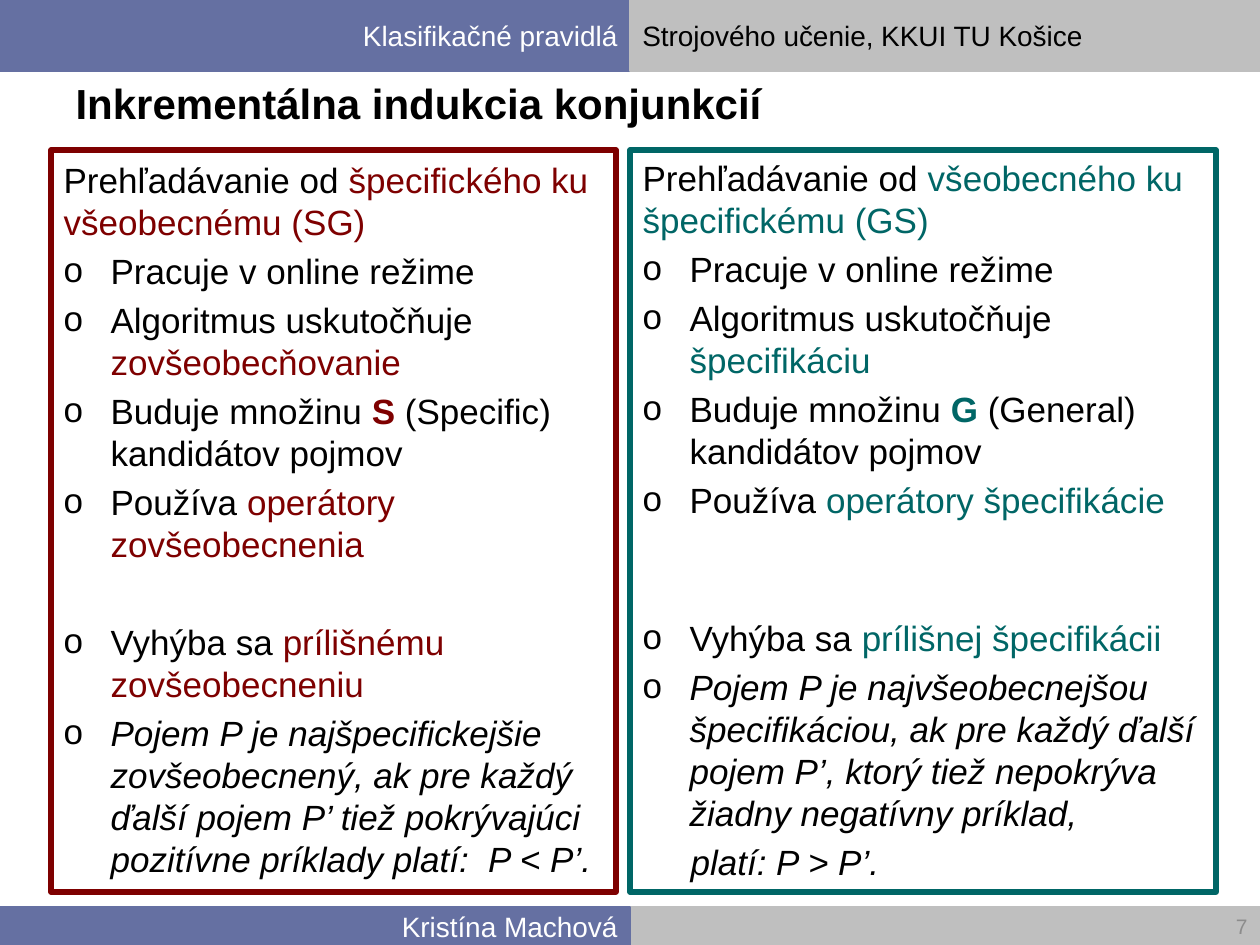
from lxml.etree import SubElement
from pptx import Presentation
from pptx.dml.color import RGBColor
from pptx.enum.shapes import MSO_SHAPE
from pptx.enum.text import MSO_ANCHOR, MSO_AUTO_SIZE, PP_ALIGN
from pptx.oxml.ns import qn
from pptx.util import Emu, Pt

PX_PER_INCH = 126
FONT = "Arial"
BLACK = RGBColor(0x00, 0x00, 0x00)
WHITE = RGBColor(0xFF, 0xFF, 0xFF)
BLUE = RGBColor(0x65, 0x70, 0xA2)
GREY = RGBColor(0xBF, 0xBF, 0xBF)
NUMBER_GREY = RGBColor(0x8C, 0x8C, 0x8C)
DARK_RED = RGBColor(0x7E, 0x00, 0x00)
TEAL = RGBColor(0x00, 0x66, 0x66)

WIDTH, HEIGHT, HALF = 1260, 945, 630
HEADER_HEIGHT = 71
FOOTER_TOP, FOOTER_HEIGHT = 907, 38
INDENT = 47
PLAIN, ACCENT, STRONG, ITALIC = "plain", "accent", "strong", "italic"

SPECIFIC_TO_GENERAL = [
    dict(parts=[("Prehľadávanie od ", PLAIN),
                ("špecifického ku všeobecnému (SG)", ACCENT)], bullet=None),
    dict(parts=[("Pracuje v online režime", PLAIN)]),
    dict(parts=[("Algoritmus uskutočňuje ", PLAIN), ("zovšeobecňovanie", ACCENT)]),
    dict(parts=[("Buduje množinu ", PLAIN), ("S", STRONG),
                (" (Specific) kandidátov pojmov", PLAIN)]),
    dict(parts=[("Používa ", PLAIN), ("operátory zovšeobecnenia", ACCENT)]),
    dict(parts=[("Vyhýba sa ", PLAIN), ("prílišnému zovšeobecneniu", ACCENT)],
         before=32),
    dict(parts=[("Pojem P je najšpecifickejšie zovšeobecnený, ak pre každý ďalší "
                 "pojem P’ tiež pokrývajúci pozitívne príklady platí:  P < P’.", ITALIC)]),
]
GENERAL_TO_SPECIFIC = [
    dict(parts=[("Prehľadávanie od ", PLAIN),
                ("všeobecného ku špecifickému (GS)", ACCENT)], bullet=None),
    dict(parts=[("Pracuje v online režime", PLAIN)]),
    dict(parts=[("Algoritmus uskutočňuje ", PLAIN), ("špecifikáciu", ACCENT)]),
    dict(parts=[("Buduje množinu ", PLAIN), ("G", STRONG),
                (" (General) kandidátov pojmov", PLAIN)]),
    dict(parts=[("Používa ", PLAIN), ("operátory špecifikácie", ACCENT)]),
    dict(parts=[("Vyhýba sa ", PLAIN), ("prílišnej špecifikácii", ACCENT)],
         before=55),
    dict(parts=[("Pojem P je najvšeobecnejšou špecifikáciou, ak pre každý ďalší "
                 "pojem P’, ktorý tiež nepokrýva žiadny negatívny príklad,", ITALIC)]),
    dict(parts=[("platí: P > P’.", ITALIC)], bullet=None, margin=INDENT + 1),
]


def px(length):
    return Emu(round(length * 914400 / PX_PER_INCH))


def add_text(paragraph, text, size=20, color=BLACK, bold=False, italic=False,
             align=PP_ALIGN.LEFT):
    paragraph.alignment = align
    run = paragraph.add_run()
    run.text = text
    font = run.font
    font.name, font.size = FONT, Pt(size)
    font.bold, font.italic = bold, italic
    font.color.rgb = color


def place(holder, left, top, width, height, anchor):
    holder.left, holder.top = px(left), px(top)
    holder.width, holder.height = px(width), px(height)
    frame = holder.text_frame
    frame.word_wrap = True
    frame.auto_size = MSO_AUTO_SIZE.NONE
    frame.vertical_anchor = anchor
    return frame


def add_rectangle(slide, left, top, width, height, line, line_width, fill=None):
    rectangle = slide.shapes.add_shape(
        MSO_SHAPE.RECTANGLE, px(left), px(top), px(width), px(height))
    rectangle.shadow.inherit = False
    if fill is None:
        rectangle.fill.background()
    else:
        rectangle.fill.solid()
        rectangle.fill.fore_color.rgb = fill
    rectangle.line.color.rgb = line
    rectangle.line.width = Pt(line_width)
    return rectangle


def add_band(slide, left, top, height, fill, text="", **text_format):
    band = add_rectangle(slide, left, top, HALF, height, fill, 0.75, fill=fill)
    band.text_frame.vertical_anchor = MSO_ANCHOR.MIDDLE
    if text:
        add_text(band.text_frame.paragraphs[0], text, size=16, **text_format)


def set_bullet(paragraph, bullet, margin):
    properties = paragraph._p.get_or_add_pPr()
    properties.set("marL", str(px(margin)))
    properties.set("indent", str(-px(margin) if bullet else 0))
    if bullet:
        SubElement(properties, qn("a:buFont")).set("typeface", FONT)
        SubElement(properties, qn("a:buChar")).set("char", bullet)
    else:
        SubElement(properties, qn("a:buNone"))


def fill_column(frame, items, accent):
    styles = {PLAIN: {}, ACCENT: dict(color=accent),
              STRONG: dict(color=accent, bold=True), ITALIC: dict(italic=True)}
    for index, item in enumerate(items):
        paragraph = frame.add_paragraph() if index else frame.paragraphs[0]
        paragraph.space_before = Pt(item.get("before", 4))
        bullet = item.get("bullet", "o")
        set_bullet(paragraph, bullet, item.get("margin", INDENT if bullet else 0))
        for text, style in item["parts"]:
            add_text(paragraph, text, **styles[style])


def add_page_number(slide, number):
    left = 829
    box = slide.shapes.add_textbox(0, 0, 0, 0)
    frame = place(box, left, FOOTER_TOP, WIDTH - left, FOOTER_HEIGHT, MSO_ANCHOR.MIDDLE)
    add_text(frame.paragraphs[0], number, size=12, color=NUMBER_GREY,
             align=PP_ALIGN.RIGHT)


def main():
    presentation = Presentation()
    presentation.slide_width, presentation.slide_height = px(WIDTH), px(HEIGHT)
    slide = presentation.slides.add_slide(presentation.slide_layouts[3])
    title, left_column, right_column = slide.placeholders

    add_band(slide, HALF, FOOTER_TOP, FOOTER_HEIGHT, GREY)
    add_band(slide, 0, 0, HEADER_HEIGHT, BLUE, "Klasifikačné pravidlá",
             color=WHITE, align=PP_ALIGN.RIGHT)
    add_band(slide, HALF, 0, HEADER_HEIGHT, GREY, "Strojového učenie, KKUI TU Košice")
    add_band(slide, 0, FOOTER_TOP, FOOTER_HEIGHT, BLUE, "Kristína Machová",
             color=WHITE, align=PP_ALIGN.RIGHT)

    title_frame = place(title, 63, HEADER_HEIGHT, 1134, 63, MSO_ANCHOR.MIDDLE)
    add_text(title_frame.paragraphs[0], "Inkrementálna indukcia konjunkcií",
             size=24, bold=True)

    left_frame = place(left_column, 51, 152, 605, 774, MSO_ANCHOR.TOP)
    fill_column(left_frame, SPECIFIC_TO_GENERAL, DARK_RED)
    right_frame = place(right_column, HALF, 150, 616, 774, MSO_ANCHOR.TOP)
    fill_column(right_frame, GENERAL_TO_SPECIFIC, TEAL)

    add_page_number(slide, "7")
    for left, width, color in ((51, 565, DARK_RED), (HALF, 586, TEAL)):
        add_rectangle(slide, left, 150, width, 742, color, 3)

    presentation.save("out.pptx")


if __name__ == "__main__":
    main()
